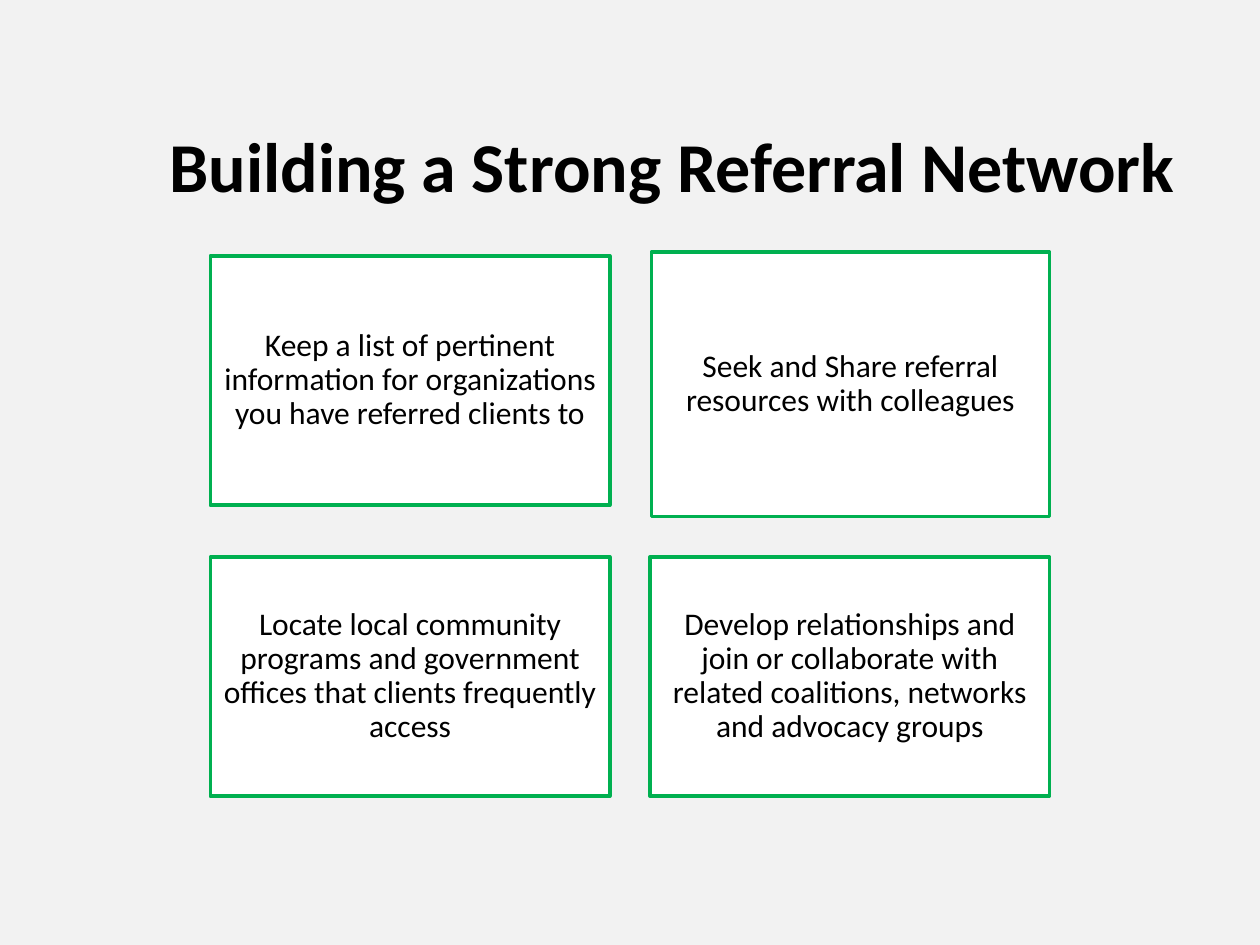
"""Build the slide on building a strong referral network."""
from dataclasses import dataclass

from pptx import Presentation
from pptx import util as u
from pptx.dml.color import RGBColor
from pptx.enum import shapes, text

TITLE = "Building a Strong Referral Network"
TITLE_AREA = (72, 66.24, 624.24, 55.44)
ADVICE = [
    ("Keep a list of pertinent information for organizations you have referred clients to",
     (120.24, 146.16, 228.24, 142.56)),
    ("Seek and Share referral resources with colleagues",
     (372.24, 144, 227.52, 151.2)),
    ("Locate local community programs and government offices that clients frequently access",
     (120.24, 318.24, 228.24, 136.8)),
    ("Develop relationships and join or collaborate with related coalitions, networks and advocacy groups",
     (371.52, 318.24, 228.24, 136.8)),
]


@dataclass(frozen=True)
class Theme:
    font: str = "Calibri"
    title_size: int = 40
    advice_size: int = 18
    ink: str = "000000"
    page: str = "F2F2F2"
    card: str = "FFFFFF"
    border: str = "00B050"
    border_width: int = 2
    card_inset: int = 5


THEME = Theme()


def color(value):
    return RGBColor.from_string(value)


def points(area):
    return [u.Pt(length) for length in area]


def write(frame, wording, size, bold=False):
    frame.word_wrap = True
    line = frame.paragraphs[0]
    line.alignment = text.PP_ALIGN.CENTER
    run = line.add_run()
    run.text = wording
    run.font.name = THEME.font
    run.font.size = u.Pt(size)
    run.font.bold = bold
    run.font.color.rgb = color(THEME.ink)
    return line


def add_title(slide):
    frame = slide.shapes.add_textbox(*points(TITLE_AREA)).text_frame
    write(frame, TITLE, THEME.title_size, bold=True)
    frame.auto_size = text.MSO_AUTO_SIZE.SHAPE_TO_FIT_TEXT


def add_card(slide, advice, area):
    card = slide.shapes.add_shape(shapes.MSO_SHAPE.RECTANGLE, *points(area))
    card.shadow.inherit = False
    card.fill.solid()
    card.fill.fore_color.rgb = color(THEME.card)
    card.line.color.rgb = color(THEME.border)
    card.line.width = u.Pt(THEME.border_width)
    frame = card.text_frame
    frame.vertical_anchor = text.MSO_ANCHOR.MIDDLE
    for side in ("left", "top", "right", "bottom"):
        setattr(frame, f"margin_{side}", u.Pt(THEME.card_inset))
    write(frame, advice, THEME.advice_size).line_spacing = 0.9


def main():
    deck = Presentation()
    deck.slide_width, deck.slide_height = u.Pt(720), u.Pt(540)
    slide = deck.slides.add_slide(deck.slide_layouts[6])
    slide.background.fill.solid()
    slide.background.fill.fore_color.rgb = color(THEME.page)
    for advice, area in ADVICE:
        add_card(slide, advice, area)
    add_title(slide)
    deck.save("out.pptx")


if __name__ == "__main__":
    main()
